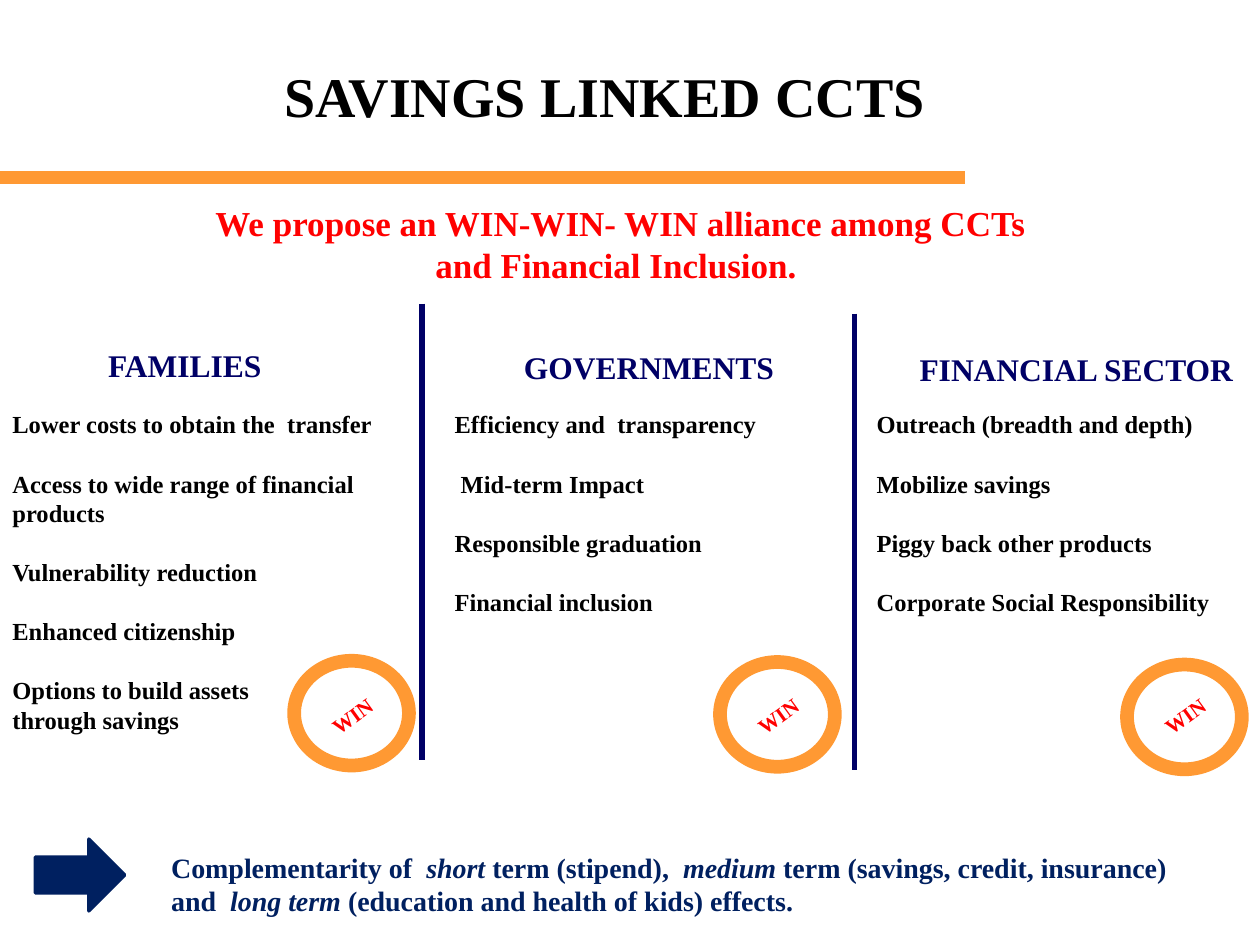
"""Slide on savings linked CCTs: a three-way win for families, governments and finance."""
import pptx
import pptx.dml.color
import pptx.enum.shapes
import pptx.enum.text
import pptx.oxml.ns
import pptx.util
from lxml import etree

PX = 9144
THEME = {
    "font": "Times New Roman",
    "black": "000000", "red": "FF0000", "navy": "000066", "deep": "002060", "orange": "FF9933",
    "title": 32, "proposal": 20, "heading": 18, "effects": 16, "benefit": 14, "win": 12, "gap": 17,
}
SHAPE = pptx.enum.shapes.MSO_SHAPE
ALIGN = pptx.enum.text.PP_ALIGN

deck = pptx.Presentation()
deck.slide_width, deck.slide_height = 1000 * PX, 750 * PX
slide = deck.slides.add_slide(deck.slide_layouts[6])


def add_text(place, paragraphs, size, color, align=ALIGN.LEFT):
    box = slide.shapes.add_textbox(*(length * PX for length in place))
    box.text_frame.word_wrap = True
    box.text_frame.text = "\n".join(paragraphs)
    for paragraph in box.text_frame.paragraphs:
        paragraph.alignment = align
        paragraph.font.name = THEME["font"]
        paragraph.font.size = pptx.util.Pt(THEME[size])
        paragraph.font.bold = True
        paragraph.font.color.rgb = pptx.dml.color.RGBColor.from_string(THEME[color])
    return box


def add_line(start, end, color, weight):
    ends = (length * PX for length in start + end)
    line = slide.shapes.add_connector(pptx.enum.shapes.MSO_CONNECTOR.STRAIGHT, *ends)
    line.line.color.rgb = pptx.dml.color.RGBColor.from_string(THEME[color])
    line.line.width = pptx.util.Pt(weight)
    etree.SubElement(line._element.spPr, pptx.oxml.ns.qn("a:effectLst"))


add_line((0, 141), (766, 141), "orange", 7.25)
title = add_text((30, 13, 900, 125), ["SAVINGS LINKED CCTS"], "title", "black", ALIGN.CENTER)
title.text_frame.vertical_anchor = pptx.enum.text.MSO_ANCHOR.MIDDLE
add_text((154, 155, 677, 111),
         ["We propose an WIN-WIN- WIN alliance among CCTs and Financial Inclusion. "],
         "proposal", "red", ALIGN.CENTER)

partners = [
    ("FAMILIES", (76, 270, 150, 40), (0, 320, 335, 293), (228, 519),
     ["Lower costs to obtain the  transfer", "Access to wide range of financial products",
      "Vulnerability reduction", "Enhanced citizenship",
      "Options to build assets", "through savings"]),
    ("GOVERNMENTS", (406, 271, 236, 40), (351, 320, 327, 175), (566, 520),
     ["Efficiency and  transparency", " Mid-term Impact", "Responsible graduation",
      "Financial inclusion"]),
    ("FINANCIAL SECTOR", (720, 273, 386, 40), (686, 320, 357, 175), (889, 522),
     ["Outreach (breadth and depth)", "Mobilize savings", "Piggy back other products",
      "Corporate Social Responsibility"]),
]
for heading, heading_place, benefits_place, (ring_left, ring_top), benefits in partners:
    add_text(heading_place, [heading], "heading", "navy")
    benefit_list = add_text(benefits_place, benefits, "benefit", "black")
    for benefit in benefit_list.text_frame.paragraphs[1:]:
        if benefit.text != "through savings":
            benefit.space_before = pptx.util.Pt(THEME["gap"])

    win = add_text((ring_left - 55, 553, 213, 30), ["WIN"], "win", "red", ALIGN.CENTER)
    win.rotation = 324.1
    ring = slide.shapes.add_shape(SHAPE.DONUT, ring_left * PX, ring_top * PX, 102 * PX, 94 * PX)
    ring.adjustments[0] = 0.116
    ring.shadow.inherit = False
    ring.fill.solid()
    ring.fill.fore_color.rgb = pptx.dml.color.RGBColor.from_string(THEME["orange"])
    ring.line.fill.background()

for divider_x, divider_top in [(335, 241), (678, 249)]:
    add_line((divider_x, divider_top), (divider_x, divider_top + 362), "navy", 3)

arrow = slide.shapes.add_shape(SHAPE.RIGHT_ARROW, 28 * PX, 666 * PX, 71 * PX, 57 * PX)
arrow.shadow.inherit = False
arrow.fill.solid()
arrow.fill.fore_color.rgb = pptx.dml.color.RGBColor.from_string(THEME["deep"])
arrow.line.color.rgb = pptx.dml.color.RGBColor.from_string(THEME["deep"])
arrow.line.width = pptx.util.Pt(2)

effects = add_text((126, 670, 839, 91), [""], "effects", "deep")
phrases = ["Complementarity of  ", "short ", "term (stipend),  ", "medium ",
           "term (savings, credit, insurance) and  ", "long term ",
           "(education and health of kids) effects."]
for position, phrase in enumerate(phrases):
    run = effects.text_frame.paragraphs[0].add_run()
    run.text = phrase
    if position % 2:
        run.font.italic = True

deck.save("out.pptx")
